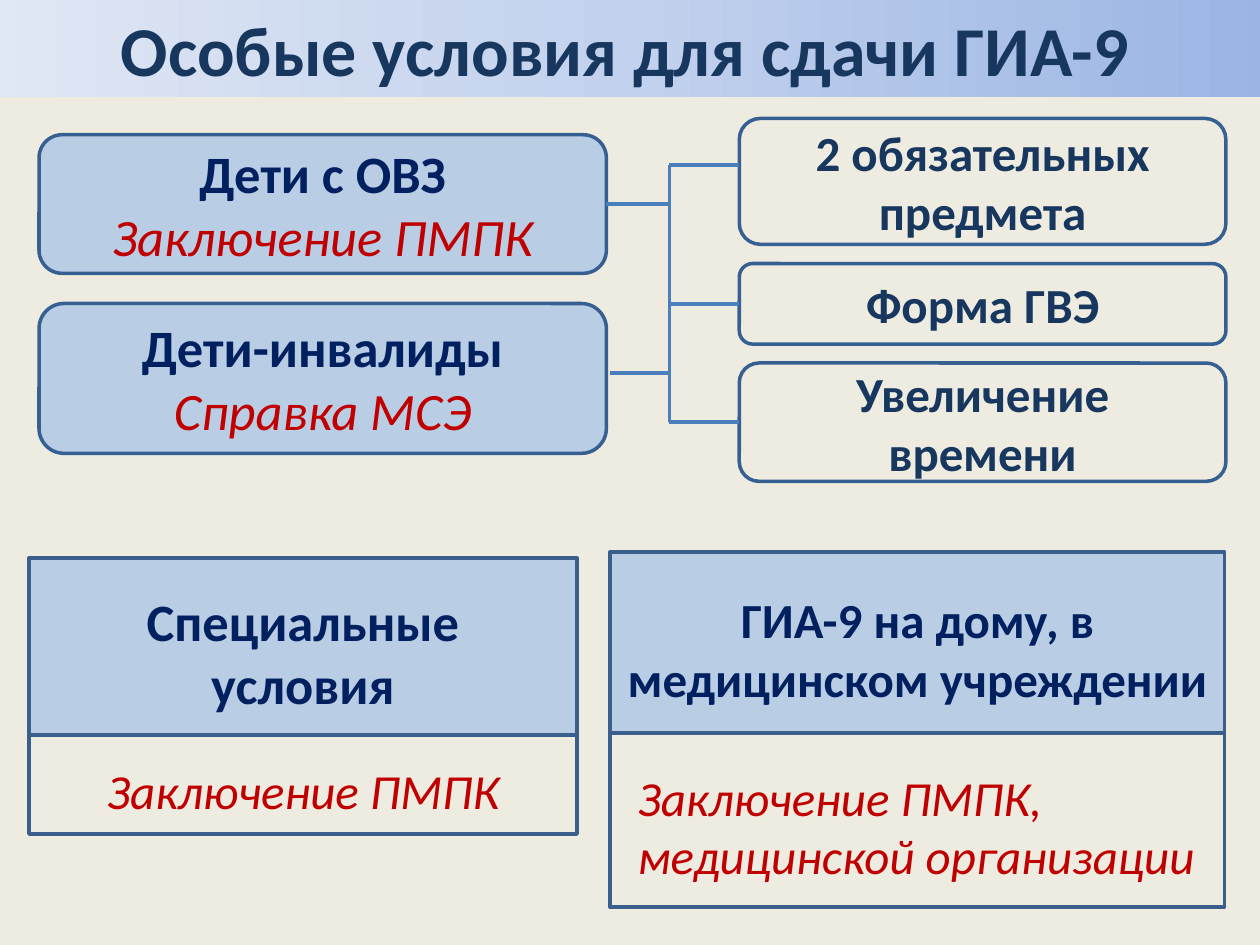
from copy import deepcopy
from dataclasses import dataclass
from pptx import Presentation, util as u
from pptx.dml.color import RGBColor as Rgb
from pptx.enum import shapes as es, text as et
from pptx.oxml.ns import qn
from lxml import etree


@dataclass(frozen=True)
class Theme:
    font: str = "Calibri"
    page: str = "EEECE1"
    fade: tuple = ("9AB5E4", "C2D1ED", "E1E8F5")
    pale: str = "B9CDE5"
    edge: str = "376092"
    frame: str = "3A5F8C"
    wire: str = "4B7EBC"
    dark: str = "17375E"
    navy: str = "002060"
    red: str = "C00000"
    head: int = 40
    large: int = 30
    body: int = 28
    rule: int = 2


T = Theme()
WIDE, HIGH = u.Inches(10), u.Inches(7.5)
COL, ROW = WIDE / 100, HIGH / 75


def place(x, y):
    return round(x * COL), round(y * ROW)


def write(shape, lines, size, align=et.PP_ALIGN.CENTER):
    frame = shape.text_frame
    frame.word_wrap = True
    frame.auto_size = et.MSO_AUTO_SIZE.NONE
    frame.vertical_anchor = et.MSO_ANCHOR.MIDDLE
    for n, (words, color, strong) in enumerate(lines):
        para = frame.add_paragraph() if n else frame.paragraphs[0]
        para.alignment = align
        run = para.add_run()
        run.text = words
        font = run.font
        font.name, font.size = T.font, u.Pt(size)
        font.bold, font.italic = strong, not strong
        font.color.rgb = Rgb.from_string(color)


def block(slide, kind, box, fill, line):
    x, y, w, h = box
    shape = slide.shapes.add_shape(kind, *place(x, y), *place(w, h))
    shape.shadow.inherit = False
    if fill:
        shape.fill.solid()
        shape.fill.fore_color.rgb = Rgb.from_string(fill)
    else:
        shape.fill.background()
    shape.line.color.rgb = Rgb.from_string(line)
    shape.line.width = u.Pt(T.rule)
    return shape


def wire(slide, start, end):
    link = slide.shapes.add_connector(
        es.MSO_CONNECTOR.STRAIGHT, *place(*start), *place(*end))
    link.line.color.rgb = Rgb.from_string(T.wire)
    link.line.width = u.Pt(T.rule)
    etree.SubElement(link._element.spPr, qn("a:effectLst"))
    return link


def banner(slide, box, words):
    x, y, w, h = box
    title = slide.shapes.title
    title.left, title.top = place(x, y)
    title.width, title.height = place(w, h)
    title.fill.gradient()
    title.fill.gradient_angle = 180
    stops = title.fill.gradient_stops
    first = stops[0]._gs
    first.addnext(deepcopy(first))
    for n, (stop, color) in enumerate(zip(title.fill.gradient_stops, T.fade)):
        stop.position = n / 2
        stop.color.rgb = Rgb.from_string(color)
    write(title, [(words, T.dark, True)], T.head)


def scheme(slide, box):
    x, y, w, h = box
    pill = es.MSO_SHAPE.ROUNDED_RECTANGLE
    half, side = 0.478 * w, 0.59 * w
    goals = []
    for top, tall, words in (
        (0, 0.347, "2 обязательных предмета"),
        (0.4, 0.222, "Форма ГВЭ"),
        (0.674, 0.326, "Увеличение времени"),
    ):
        goal = block(slide, pill, (x + side, y + top * h, w - side, tall * h),
                     None, T.edge)
        write(goal, [(words, T.dark, True)], T.body)
        goals.append(goal)
    groups = []
    for top, tall, words, paper in (
        (0.045, 0.382, "Дети с ОВЗ", "Заключение ПМПК"),
        (0.51, 0.413, "Дети-инвалиды", "Справка МСЭ"),
    ):
        group = block(slide, pill, (x, y + top * h, half, tall * h),
                      T.pale, T.edge)
        write(group, [(words, T.navy, True), (paper, T.red, False)], T.large)
        groups.append(group)

    trunk = x + 0.531 * w
    high, mid, low = (y + k * h for k in (0.128, 0.511, 0.837))
    wire(slide, (trunk, high), (trunk, low))
    join = y + 0.236 * h
    wire(slide, (x + half, join), (trunk, join)).begin_connect(groups[0], 3)
    wire(slide, (trunk, high), (x + side, high))
    for goal, level in zip(goals[1:], (mid, low)):
        wire(slide, (trunk, level), (x + side, level)).end_connect(goal, 1)
    link = y + 0.701 * h
    wire(slide, (x + 0.481 * w, link), (trunk, link))


def card(slide, box, share, head, notes, size, pads, align):
    x, y, w, h = box
    cut = share * h
    rect = es.MSO_SHAPE.RECTANGLE
    top = block(slide, rect, (x, y, w, cut), T.pale, T.frame)
    low = block(slide, rect, (x, y + cut, w, h - cut), None, T.frame)
    write(top, [(head, T.navy, True)], size)
    write(low, [(note, T.red, False) for note in notes], T.body, align)
    for part, pad in zip((top, low), pads):
        frame = part.text_frame
        frame.margin_left = frame.margin_right = round(pad * COL)
        frame.margin_top = round(1.4 * ROW)


def main():
    deck = Presentation()
    deck.slide_width, deck.slide_height = WIDE, HIGH
    slide = deck.slides.add_slide(deck.slide_layouts[5])
    slide.background.fill.solid()
    slide.background.fill.fore_color.rgb = Rgb.from_string(T.page)
    banner(slide, (-2, 0, 103.2, 7.7), "Особые условия для сдачи ГИА-9")
    scheme(slide, (3.1, 9.4, 94.2, 28.8))
    card(slide, (2.3, 44.3, 43.5, 21.9), 0.64, "Специальные условия",
         ["Заключение ПМПК"], T.large, (2.3, 1), et.PP_ALIGN.CENTER)
    card(slide, (48.4, 43.8, 48.8, 28.2), 0.51,
         "ГИА-9 на дому, в медицинском учреждении",
         ["Заключение ПМПК,", "медицинской организации"],
         T.body, (0.8, 2.2), et.PP_ALIGN.LEFT)
    deck.save("out.pptx")


if __name__ == "__main__":
    main()
